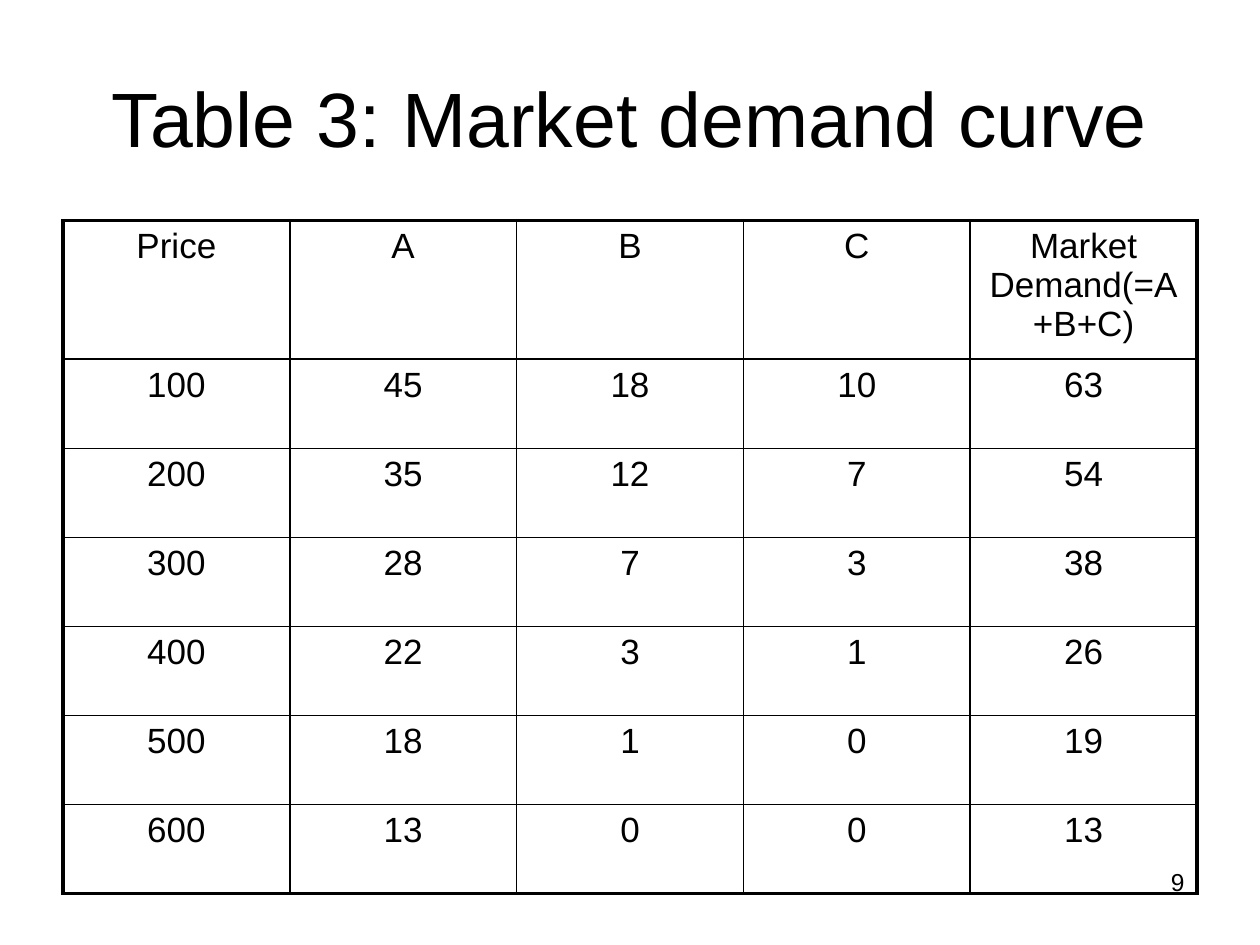
"""Build the market demand slide: a title, a bordered demand table and a page number."""
from dataclasses import dataclass

from lxml.etree import SubElement
from pptx import Presentation
from pptx.dml.color import RGBColor
from pptx.enum.text import MSO_ANCHOR, PP_ALIGN
from pptx.oxml.ns import qn
from pptx.util import Inches, Pt


@dataclass(frozen=True)
class Theme:
    font: str = "Arial"
    ink: str = "000000"
    title: int = 44
    body: int = 20
    page: int = 14
    outer_line: float = 2.25
    inner_line: float = 1


THEME = Theme()


def write(frame, text, size, align=PP_ALIGN.CENTER, anchor=MSO_ANCHOR.TOP):
    frame.word_wrap = True
    frame.vertical_anchor = anchor
    paragraph = frame.paragraphs[0]
    paragraph.alignment = align
    run = paragraph.add_run()
    run.text = text
    run.font.name = THEME.font
    run.font.size = Pt(size)
    run.font.color.rgb = RGBColor.from_string(THEME.ink)


def draw_border(cell, side, width):
    line = SubElement(cell._tc.get_or_add_tcPr(), qn(f"a:ln{side}"), w=str(Pt(width)))
    fill = SubElement(line, qn("a:solidFill"))
    SubElement(fill, qn("a:srgbClr"), val=THEME.ink)


prs = Presentation()
prs.slide_width, prs.slide_height = Inches(10), Inches(7.5)
slide = prs.slides.add_slide(prs.slide_layouts[6])

page_number = slide.shapes.add_textbox(Inches(7.17), Inches(6.83), Inches(2.33), Inches(0.52))
write(page_number.text_frame, "9", THEME.page, align=PP_ALIGN.RIGHT)

title = slide.shapes.add_textbox(Inches(0.5), Inches(0.3), Inches(9), Inches(1.25))
write(title.text_frame, "Table 3: Market demand curve", THEME.title, anchor=MSO_ANCHOR.MIDDLE)

demand_rows = [
    ("Price", "A", "B", "C", "Market Demand(=A+B+C)"),
    (100, 45, 18, 10, 63),
    (200, 35, 12, 7, 54),
    (300, 28, 7, 3, 38),
    (400, 22, 3, 1, 26),
    (500, 18, 1, 0, 19),
    (600, 13, 0, 0, 13),
]
last_row, last_column = len(demand_rows) - 1, len(demand_rows[0]) - 1

demand = slide.shapes.add_table(
    last_row + 1, last_column + 1, Inches(0.5), Inches(1.75), Inches(9), Inches(4.95)
).table
demand.first_row = False
demand.horz_banding = False

for row, values in enumerate(demand_rows):
    for column, value in enumerate(values):
        cell = demand.cell(row, column)
        write(cell.text_frame, str(value), THEME.body)
        on_edge = {
            "L": column == 0,
            "R": column == last_column,
            "T": row == 0,
            "B": row == last_row,
        }
        for side, is_outer in on_edge.items():
            draw_border(cell, side, THEME.outer_line if is_outer else THEME.inner_line)
        cell.fill.background()

prs.save("out.pptx")
